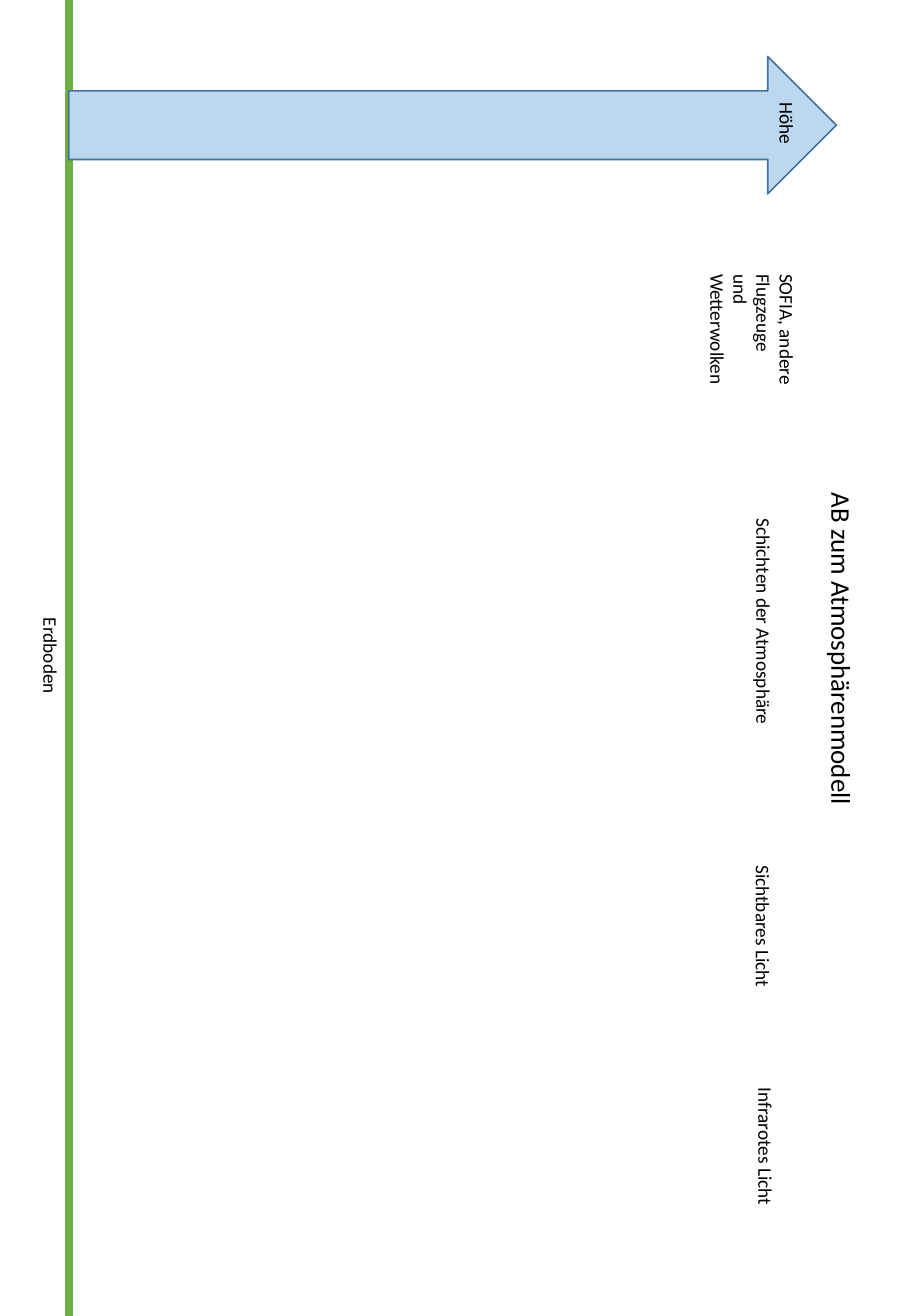
import pptx
import pptx.util
import pptx.dml.color
import pptx.enum.shapes
import pptx.enum.text
from lxml import etree

Inches, Pt = pptx.util.Inches, pptx.util.Pt
WIDTH, HEIGHT = 7.5, 10.83
COLORS = {"ground": "70AD47", "arrow": "BDD7EE", "edge": "43739E", "text": "000000"}
FORMATS = {
    "title": {"name": "Calibri", "size": Pt(16)},
    "label": {"name": "Calibri", "size": Pt(11.4)},
}
INSETS = {"margin_left": 0.09, "margin_right": 0.09, "margin_top": 0.05, "margin_bottom": 0.05}

# Text, format, centre in percent of the slide, box length and height in inches
TEXTS = [
    ("AB zum Atmosphärenmodell", "title", 92.4, 50, 2.9, 0.37),
    ("Höhe", "label", 86.4, 9.56, 0.56, 0.29),
    ("Erdboden", "label", 5.6, 50, 0.84, 0.29),
    ("SOFIA, andere Flugzeuge\vund Wetterwolken", "label", 83.8, 25.21, 1.13, 0.68),
    ("Schichten der Atmosphäre", "label", 83.87, 47.69, 1.98, 0.29),
    ("Sichtbares Licht", "label", 83.8, 70.78, 1.27, 0.29),
    ("Infrarotes Licht", "label", 84.07, 87.67, 1.27, 0.29),
]
GROUND_X = 7.6
ARROW = (49.67, 9.51, 1.13, 6.32)


def rgb(key):
    return pptx.dml.color.RGBColor.from_string(COLORS[key])


def box(cx, cy, w, h):
    """Unrotated frame around a centre given in percent of the slide."""
    x, y = WIDTH * cx / 100 - w / 2, HEIGHT * cy / 100 - h / 2
    return [Inches(v) for v in (x, y, w, h)]


def add_text(slide, text, style, *place):
    sp = slide.shapes.add_textbox(*box(*place))
    sp.rotation = 90
    tf = sp.text_frame
    tf.word_wrap = True
    tf.auto_size = pptx.enum.text.MSO_AUTO_SIZE.SHAPE_TO_FIT_TEXT
    for side, inset in INSETS.items():
        setattr(tf, side, Inches(inset))
    p = tf.paragraphs[0]
    p.text = text
    for r in p.runs:
        for key, value in FORMATS[style].items():
            setattr(r.font, key, value)
        r.font.color.rgb = rgb("text")


prs = pptx.Presentation()
prs.slide_width, prs.slide_height = Inches(WIDTH), Inches(HEIGHT)
slide = prs.slides.add_slide(prs.slide_layouts[6])

# Ground line, running just past both slide edges
x = Inches(WIDTH * GROUND_X / 100)
ground = slide.shapes.add_connector(
    pptx.enum.shapes.MSO_CONNECTOR.STRAIGHT, x, Inches(-0.08), x, Inches(HEIGHT + 0.08))
ground.line.color.rgb = rgb("ground")
ground.line.width = Pt(4.5)
etree.SubElement(ground._element.spPr, pptx.oxml.ns.qn("a:effectLst"))

# Height arrow, turned to point away from the ground
arrow = slide.shapes.add_shape(pptx.enum.shapes.MSO_SHAPE.DOWN_ARROW, *box(*ARROW))
arrow.rotation = 270
arrow.shadow.inherit = False
arrow.fill.solid()
arrow.fill.fore_color.rgb = rgb("arrow")
arrow.line.color.rgb = rgb("edge")
arrow.line.width = Pt(1)

# Title and labels
for entry in TEXTS:
    add_text(slide, *entry)

prs.save("out.pptx")
